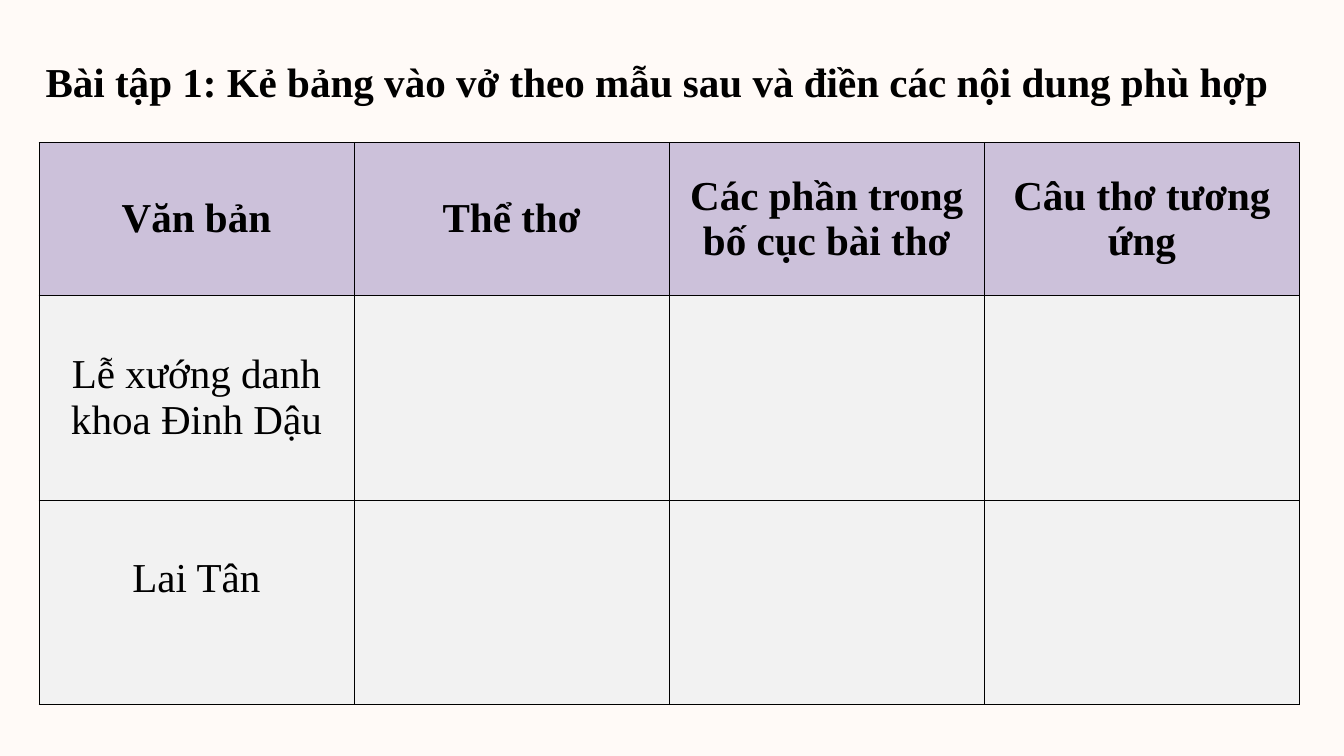
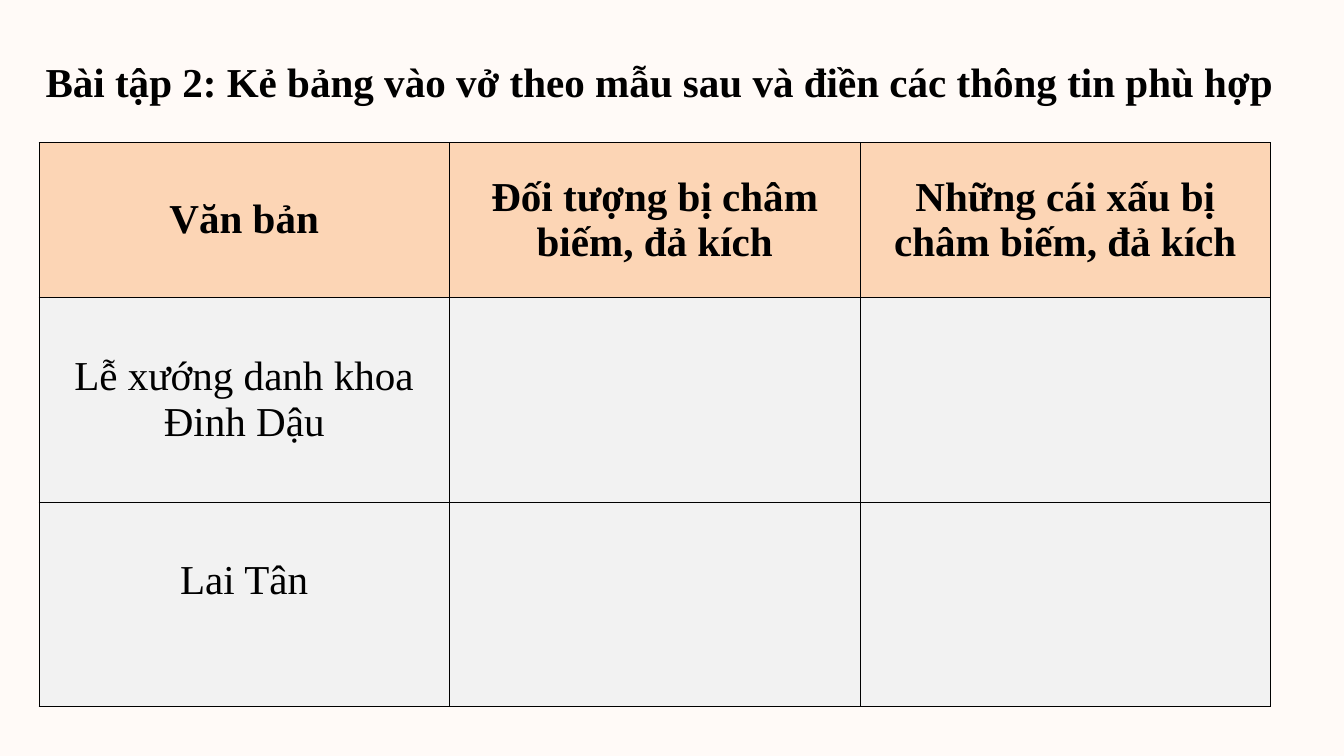
from dataclasses import dataclass

from lxml.etree import SubElement
from pptx import Presentation
from pptx.dml.color import RGBColor as Color
from pptx.enum.text import MSO_ANCHOR as Anchor, MSO_AUTO_SIZE as AutoSize, PP_ALIGN as Align
from pptx.oxml.ns import qn
from pptx.util import Inches, Pt


@dataclass(frozen=True)
class Theme:
    background: str = "FFFAF7"
    ink: str = "000000"
    body_fill: str = "F2F2F2"
    lilac: str = "CCC1DA"
    peach: str = "FCD5B5"
    font: str = "Times New Roman"
    text_size: int = 44
    border_width: int = 1


class Worksheet:
    WIDTH, HEIGHT = 20, 11.25
    LEFT, TITLE_TOP, TABLE_TOP = 0.58, 0.79, 2.12
    TITLE_WIDTH, TITLE_HEIGHT = 19, 0.84
    BODY_ROW = 3.04
    RAISED_MARGIN = 0.74

    def __init__(self, theme):
        self.theme = theme
        self.presentation = Presentation()
        self.presentation.slide_width = Inches(self.WIDTH)
        self.presentation.slide_height = Inches(self.HEIGHT)
        self.slide = None

    def add_slide(self):
        self.slide = self.presentation.slides.add_slide(self.presentation.slide_layouts[6])
        fill = self.slide.background.fill
        fill.solid()
        fill.fore_color.rgb = Color.from_string(self.theme.background)

    def set_text(self, text_frame, text, align, bold):
        text_frame.text = text
        paragraph = text_frame.paragraphs[0]
        paragraph.alignment = align
        for run in paragraph.runs:
            run.font.name = self.theme.font
            run.font.size = Pt(self.theme.text_size)
            run.font.bold = bold
            run.font.color.rgb = Color.from_string(self.theme.ink)

    def title(self, text):
        box = self.slide.shapes.add_textbox(
            Inches(self.LEFT), Inches(self.TITLE_TOP),
            Inches(self.TITLE_WIDTH), Inches(self.TITLE_HEIGHT))
        box.text_frame.word_wrap = True
        box.text_frame.auto_size = AutoSize.SHAPE_TO_FIT_TEXT
        self.set_text(box.text_frame, text, Align.JUSTIFY, True)

    def outline(self, cell):
        properties = cell._tc.get_or_add_tcPr()
        for position, side in enumerate(("lnL", "lnR", "lnT", "lnB")):
            line = SubElement(properties, qn(f"a:{side}"), w=str(Pt(self.theme.border_width)))
            fill = SubElement(line, qn("a:solidFill"))
            SubElement(fill, qn("a:srgbClr"), val=self.theme.ink)
            properties.insert(position, line)

    def cell(self, cell, text, fill, bold):
        cell.fill.solid()
        cell.fill.fore_color.rgb = Color.from_string(fill)
        self.outline(cell)
        cell.vertical_anchor = Anchor.MIDDLE
        if text:
            self.set_text(cell.text_frame, text, Align.CENTER, bold)

    def table(self, headings, poems, column_width, header_height, header_fill):
        heights = [header_height] + [self.BODY_ROW] * len(poems)
        table = self.slide.shapes.add_table(
            len(heights), len(headings), Inches(self.LEFT), Inches(self.TABLE_TOP),
            Inches(column_width * len(headings)), Inches(sum(heights))).table
        for column in table.columns:
            column.width = Inches(column_width)
        for row, height in zip(table.rows, heights):
            row.height = Inches(height)
        for column, heading in enumerate(headings):
            self.cell(table.cell(0, column), heading, header_fill, True)
            for row, poem in enumerate(poems, 1):
                text = "" if column else poem
                self.cell(table.cell(row, column), text, self.theme.body_fill, False)
        table.cell(len(poems), 0).margin_bottom = Inches(self.RAISED_MARGIN)


def main():
    theme = Theme()
    worksheet = Worksheet(theme)
    poems = ["Lễ xướng danh khoa Đinh Dậu", "Lai Tân"]
    exercises = [
        ("nội dung", ["Văn bản", "Thể thơ", "Các phần trong bố cục bài thơ", "Câu thơ tương ứng"],
         4.69, 2.28, theme.lilac),
        ("thông tin", ["Văn bản", "Đối tượng bị châm biếm, đả kích",
                       "Những cái xấu bị châm biếm, đả kích"],
         6.11, 2.31, theme.peach),
    ]
    for number, (subject, headings, width, height, fill) in enumerate(exercises, 1):
        worksheet.add_slide()
        worksheet.title(
            f"Bài tập {number}: Kẻ bảng vào vở theo mẫu sau và điền các {subject} phù hợp")
        worksheet.table(headings, poems, width, height, fill)
    worksheet.presentation.save("out.pptx")


if __name__ == "__main__":
    main()
